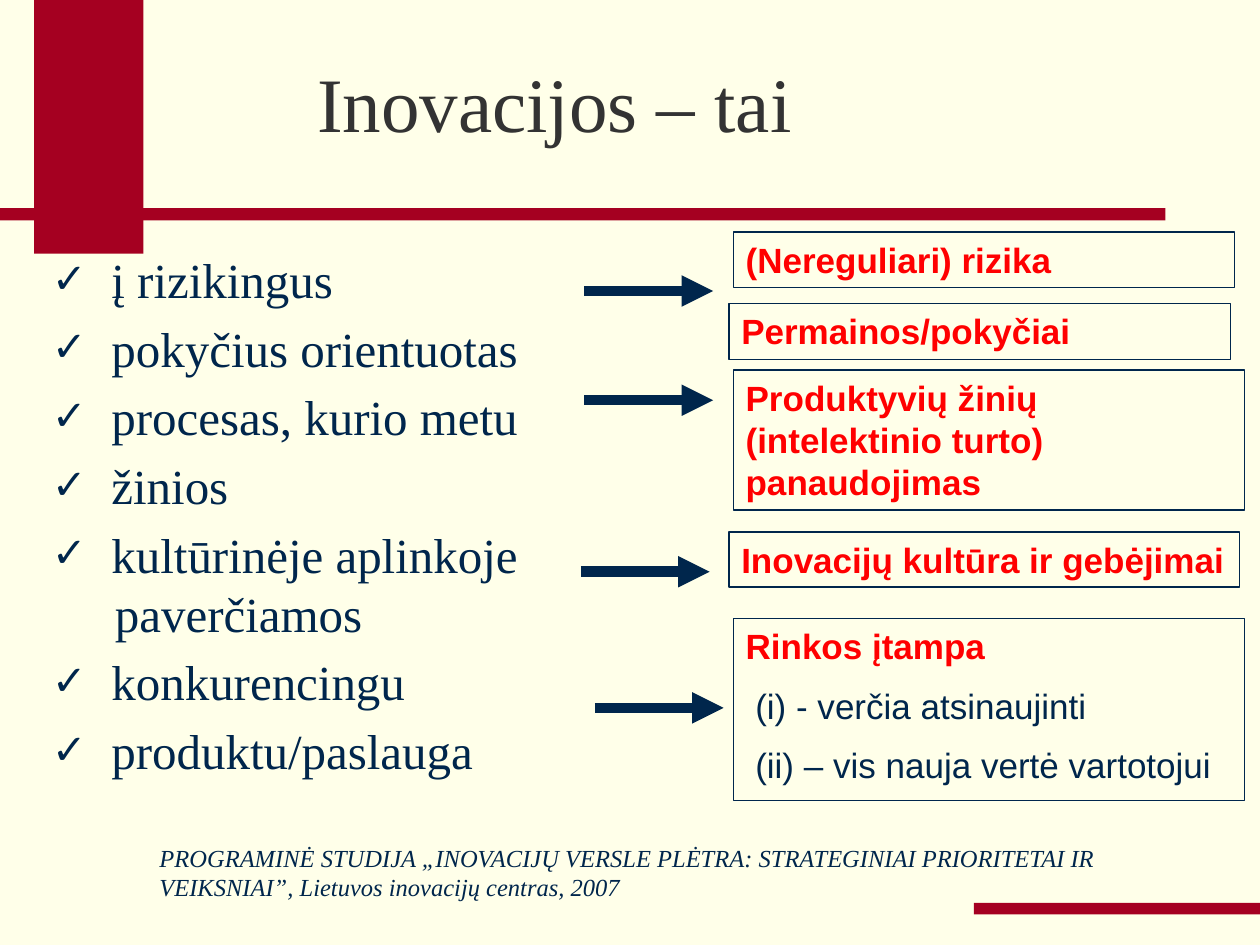
from lxml.etree import SubElement
from pptx import Presentation
from pptx.dml.color import RGBColor
from pptx.enum.shapes import MSO_CONNECTOR, MSO_SHAPE
from pptx.enum.text import MSO_ANCHOR, MSO_AUTO_SIZE, PP_ALIGN
from pptx.oxml.ns import qn
from pptx.util import Pt

PAPER, WINE, NAVY, RED, GREY = "FFFFE9", "A50021", "00264C", "FF0000", "333333"
TITLE = dict(name="Times New Roman", size=Pt(44), color=GREY)
LIST = dict(name="Times New Roman", size=Pt(28), color=NAVY)
NOTE = dict(name="Times New Roman", size=Pt(14), color=NAVY, italic=True)
HEAD = dict(name="Arial", size=Pt(20), color=RED, bold=True)
SUB = dict(name="Arial", size=Pt(20), color=NAVY, bold=False)

ITEMS = ["į rizikingus", "pokyčius orientuotas", "procesas, kurio metu", "žinios",
         "kultūrinėje aplinkoje\v\tpaverčiamos", "konkurencingu",
         "produktu/paslauga"]
SOURCE = ("PROGRAMINĖ STUDIJA „INOVACIJŲ VERSLE PLĖTRA: STRATEGINIAI PRIORITETAI IR "
          "VEIKSNIAI”, Lietuvos inovacijų centras, 2007")
BANDS = [(0, 119, 666, 7), (19.5, 0, 62.5, 145), (556.5, 516, 163.5, 6.5)]
CARDS = [
    ((419, 132.5, 286.5, 32), ["(Nereguliari) rizika"]),
    ((416.5, 173.5, 286.5, 32), ["Permainos/pokyčiai"]),
    ((419, 211.5, 292, 80), ["Produktyvių žinių (intelektinio turto) panaudojimas"]),
    ((416.5, 304, 292, 31.5), ["Inovacijų kultūra ir gebėjimai"]),
    ((419, 353.5, 292, 104), ["Rinkos įtampa", "(i) - verčia atsinaujinti",
                              "(ii) – vis nauja vertė vartotojui"]),
]
ARROWS = [(334, 166.3), (334, 228.7), (332, 326.7), (340, 404.5)]
REACH = 73.5


def paint(color):
    return RGBColor.from_string(color)


def place(shape, box):
    for side, size in zip(("left", "top", "width", "height"), box):
        setattr(shape, side, Pt(size))


def style(para, form):
    for run in para.runs:
        for key, value in form.items():
            if key == "color":
                run.font.color.rgb = paint(value)
            else:
                setattr(run.font, key, value)


def write(frame, lines, forms, gap=0):
    """Fill the frame with one paragraph a line, gap points apart."""
    frame.word_wrap = True
    frame.auto_size = MSO_AUTO_SIZE.NONE
    for i, (line, form) in enumerate(zip(lines, forms)):
        para = frame.add_paragraph() if i else frame.paragraphs[0]
        para.text = line
        para.alignment = PP_ALIGN.LEFT
        para.space_before = Pt(gap if i else 0)
        style(para, form)


def add_rect(slide, box, fill=None, line=None):
    rect = slide.shapes.add_shape(MSO_SHAPE.RECTANGLE, *map(Pt, box))
    rect.shadow.inherit = False
    if fill:
        rect.fill.solid()
        rect.fill.fore_color.rgb = paint(fill)
    else:
        rect.fill.background()
    if line:
        rect.line.color.rgb = paint(line)
        rect.line.width = Pt(0.75)
    else:
        rect.line.fill.background()
    return rect


def add_title(slide, box):
    title = slide.shapes.title
    place(title, box)
    write(title.text_frame, ["Inovacijos – tai"], [TITLE])
    title.text_frame.vertical_anchor = MSO_ANCHOR.BOTTOM


def add_list(slide, box):
    body = slide.placeholders[1]
    place(body, box)
    frame = body.text_frame
    write(frame, ITEMS, [LIST] * len(ITEMS), 5.6)
    for para in frame.paragraphs:
        props = para._p.get_or_add_pPr()
        props.set("marL", str(Pt(34)))
        props.set("indent", str(-Pt(34)))
        SubElement(props, qn("a:buSzPct"), val="85000")
        SubElement(props, qn("a:buChar"), char="✓")
        for wrap in para._p.findall(qn("a:br")):
            SubElement(wrap, qn("a:rPr"), sz="2800")


def add_card(slide, box, lines):
    frame = add_rect(slide, box, line=NAVY).text_frame
    write(frame, lines, [HEAD] + [SUB] * (len(lines) - 1), 10)
    frame.vertical_anchor = MSO_ANCHOR.TOP
    for para in frame.paragraphs[1:]:
        para._p.get_or_add_pPr().set("marL", str(Pt(5.5)))


def add_arrow(slide, left, top):
    arrow = slide.shapes.add_connector(
        MSO_CONNECTOR.STRAIGHT, Pt(left), Pt(top), Pt(left + REACH), Pt(top))
    arrow.line.color.rgb = paint(NAVY)
    arrow.line.width = Pt(6)
    SubElement(arrow.line._get_or_add_ln(), qn("a:tailEnd"), type="triangle")
    SubElement(arrow._element.spPr, qn("a:effectLst"))


def add_note(slide, box):
    note = slide.shapes.add_textbox(*map(Pt, box))
    write(note.text_frame, [SOURCE], [NOTE])


def main():
    deck = Presentation()
    deck.slide_width, deck.slide_height = Pt(720), Pt(540)
    slide = deck.slides.add_slide(deck.slide_layouts[1])
    slide.background.fill.solid()
    slide.background.fill.fore_color.rgb = paint(PAPER)
    for box in BANDS:
        add_rect(slide, box, fill=WINE)
    add_title(slide, (174, 28, 503.5, 60))
    add_list(slide, (22.5, 139, 318, 324))
    add_note(slide, (84, 478, 578, 41))
    for box, lines in CARDS:
        add_card(slide, box, lines)
    for left, top in ARROWS:
        add_arrow(slide, left, top)
    deck.save("out.pptx")


if __name__ == "__main__":
    main()
